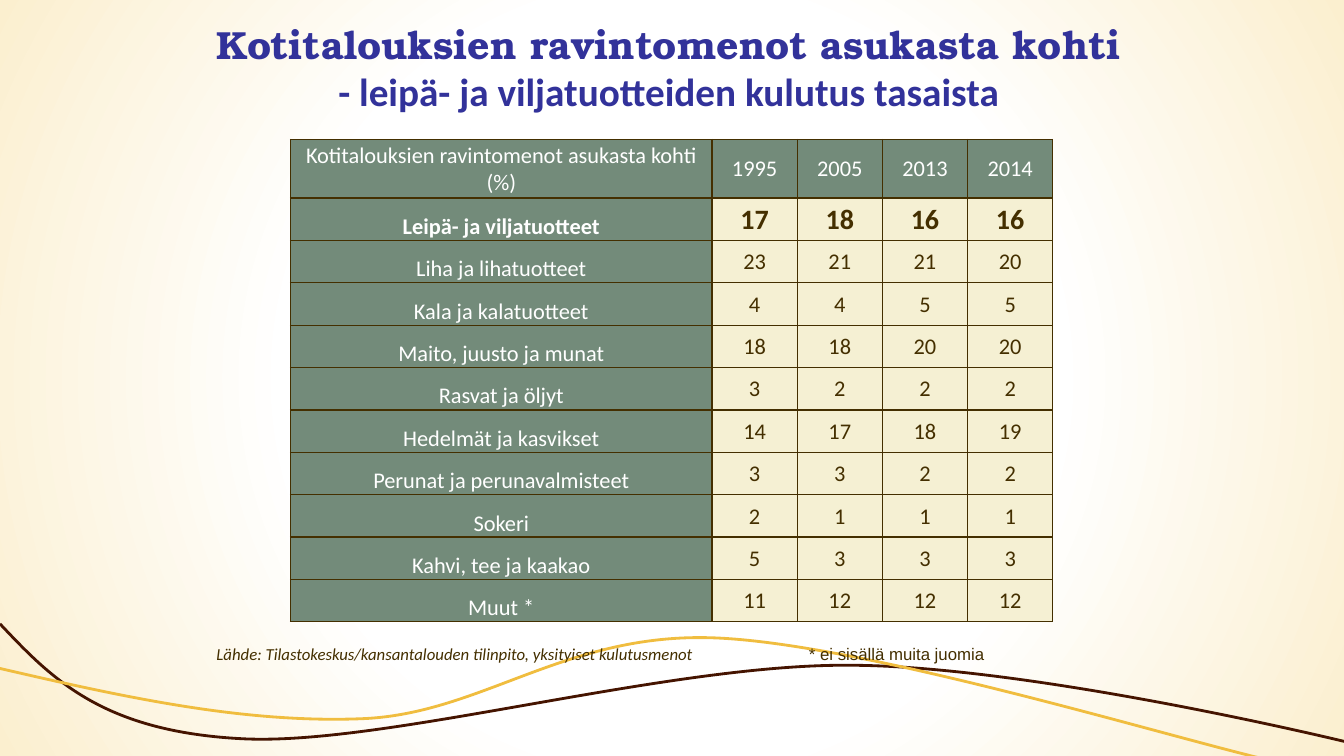
from dataclasses import dataclass

from lxml import etree
from pptx import Presentation
from pptx.dml.color import RGBColor
from pptx.enum.text import MSO_ANCHOR, MSO_AUTO_SIZE, PP_ALIGN
from pptx.oxml import parse_xml
from pptx.oxml.ns import nsdecls, qn
from pptx.util import Inches, Pt

MIDDLE, BOTTOM, TOP = MSO_ANCHOR.MIDDLE, MSO_ANCHOR.BOTTOM, MSO_ANCHOR.TOP
CENTER, LEFT = PP_ALIGN.CENTER, PP_ALIGN.LEFT
FIXED, GROW = MSO_AUTO_SIZE.NONE, MSO_AUTO_SIZE.SHAPE_TO_FIT_TEXT

BLUE = RGBColor(0x32, 0x32, 0x9A)
INK = RGBColor(0x44, 0x2F, 0x00)
WHITE = RGBColor(0xFF, 0xFF, 0xFF)
GREEN = RGBColor(0x73, 0x8B, 0x7A)
CREAM = RGBColor(0xF5, 0xF0, 0xD3)
EDGE = RGBColor(0xFB, 0xEF, 0xCF)
BROWN = RGBColor(0x45, 0x14, 0x00)
GOLD = RGBColor(0xF0, 0xBD, 0x3F)

WIDTH, HEIGHT = Inches(13.33), Inches(7.5)


@dataclass
class Box:
    """Left, top, width and height in percent of the slide."""
    left: float
    top: float
    width: float
    height: float


@dataclass
class Wave:
    """Chain of cubic curves: a start, then three points for each curve."""
    color: RGBColor
    points: list[tuple[float, float]]


@dataclass
class Note:
    text: str
    box: Box
    wrap: bool
    anchor: int
    align: int
    font: dict


WAVES = [
    Wave(BROWN, [(0, 82.53), (3.83, 89.73), (7.58, 96.8), (18.08, 97.73),
                 (28.66, 98.67), (49.44, 87.87), (63.09, 88),
                 (76.74, 88), (100.15, 98.13), (100.15, 98.13)]),
    Wave(GOLD, [(-0.08, 88.4), (9, 92.13), (18.08, 95.73), (27.01, 95.07),
                (35.93, 94.4), (42.16, 83.47), (53.41, 84.4),
                (64.67, 85.33), (86.87, 97.47), (94.67, 100.67),
                (102.55, 103.73), (101.58, 103.47), (100.53, 103.33)]),
]
TITLE = [("Kotitalouksien ravintomenot asukasta kohti", "TeX Gyre Bonum"),
         ("- leipä- ja viljatuotteiden kulutus tasaista", "Calibri")]
NOTES = [
    Note("Lähde: Tilastokeskus/kansantalouden tilinpito, yksityiset kulutusmenot",
         Box(15.23, 84.5, 37.21, 4), False, MIDDLE, CENTER,
         {"name": "Calibri", "italic": True}),
    Note("* ei sisällä muita juomia",
         Box(59.45, 84.5, 25.43, 4), True, TOP, LEFT, {"name": "Arial"}),
]
ROWS = [
    ("Kotitalouksien ravintomenot asukasta kohti (%)", 1995, 2005, 2013, 2014),
    ("Leipä- ja viljatuotteet", 17, 18, 16, 16),
    ("Liha ja lihatuotteet", 23, 21, 21, 20),
    ("Kala ja kalatuotteet", 4, 4, 5, 5),
    ("Maito, juusto ja munat", 18, 18, 20, 20),
    ("Rasvat ja öljyt", 3, 2, 2, 2),
    ("Hedelmät ja kasvikset", 14, 17, 18, 19),
    ("Perunat ja perunavalmisteet", 3, 3, 2, 2),
    ("Sokeri", 2, 1, 1, 1),
    ("Kahvi, tee ja kaakao", 5, 3, 3, 3),
    ("Muut *", 11, 12, 12, 12),
]
KEY = 1  # row that stands out
COLS = [31.36] + [6.34] * 4
TALLS = [7.73] + [5.61] * 10
GRID = Box(21.62, 18.46, sum(COLS), sum(TALLS))


def across(share: float) -> int:
    return round(WIDTH * share / 100)


def down(share: float) -> int:
    return round(HEIGHT * share / 100)


def place(box: Box) -> tuple[int, int, int, int]:
    return across(box.left), down(box.top), across(box.width), down(box.height)


def assign(item, values: dict) -> None:
    for name, value in values.items():
        setattr(item, name, value)


def style(font, color: RGBColor, **values) -> None:
    assign(font, values)
    font.color.rgb = color


def paint(slide) -> None:
    slide.background.fill.gradient()
    old = slide.background._cSld.find(".//" + qn("a:gradFill"))
    new = parse_xml(
        f'<a:gradFill {nsdecls("a")} rotWithShape="1"><a:gsLst>'
        f'<a:gs pos="50000"><a:srgbClr val="{WHITE}"/></a:gs>'
        f'<a:gs pos="100000"><a:srgbClr val="{EDGE}"/></a:gs></a:gsLst>'
        '<a:path path="circle"><a:fillToRect l="50000" t="50000" '
        'r="50000" b="50000"/></a:path></a:gradFill>')
    old.getparent().replace(old, new)


def draw_wave(slide, wave: Wave) -> None:
    spots = [(across(x), down(y)) for x, y in wave.points]
    pen = slide.shapes.build_freeform(*spots[0])
    pen.add_line_segments(spots[3::3], close=False)
    shape = pen.convert_to_shape()
    # Bend each straight part with its two control points
    for i, part in enumerate(list(shape._element.iter(qn("a:lnTo")))):
        part.tag = qn("a:cubicBezTo")
        for j, (x, y) in enumerate(spots[3 * i + 1:3 * i + 3]):
            spot = etree.Element(qn("a:pt"), x=str(x - shape.left),
                                 y=str(y - shape.top))
            part.insert(j, spot)
    shape.shadow.inherit = False
    shape.fill.background()
    shape.line.color.rgb = wave.color
    shape.line.width = Pt(2)


def draw_title(slide) -> None:
    title = slide.shapes.title
    spot = place(Box(13.7, 0.6, 72.09, 16.67))
    assign(title, dict(zip(("left", "top", "width", "height"), spot)))
    frame = title.text_frame
    assign(frame, {"auto_size": FIXED, "word_wrap": True,
                   "vertical_anchor": MIDDLE,
                   "margin_left": Inches(0.13), "margin_right": Inches(0.13),
                   "margin_top": Inches(0.06), "margin_bottom": Inches(0.06)})
    para = frame.paragraphs[0]
    para.alignment = CENTER
    for i, (text, face) in enumerate(TITLE):
        if i:
            para.add_line_break()
        run = para.add_run()
        run.text = text
        style(run.font, BLUE, name=face, size=Pt(28), bold=True)


def draw_note(slide, note: Note) -> None:
    frame = slide.shapes.add_textbox(*place(note.box)).text_frame
    assign(frame, {"text": note.text, "word_wrap": note.wrap,
                   "auto_size": GROW, "vertical_anchor": note.anchor})
    para = frame.paragraphs[0]
    para.alignment = note.align
    style(para.runs[0].font, INK, size=Pt(12), **note.font)


def border(cell) -> None:
    props = cell._tc.get_or_add_tcPr()
    for i, side in enumerate(("lnL", "lnR", "lnT", "lnB")):
        line = etree.Element(qn("a:" + side), w=str(Pt(1)))
        fill = etree.SubElement(line, qn("a:solidFill"))
        etree.SubElement(fill, qn("a:srgbClr"), val=str(INK))
        props.insert(i, line)


def draw_table(slide) -> None:
    table = slide.shapes.add_table(len(ROWS), len(COLS), *place(GRID)).table
    table.horz_banding = False
    for col, share in zip(table.columns, COLS):
        col.width = across(share)
    for row, share in zip(table.rows, TALLS):
        row.height = down(share)
    for r, values in enumerate(ROWS):
        for c, value in enumerate(values):
            cell = table.cell(r, c)
            label = c == 0 or r == 0
            assign(cell, {"text": str(value),
                          "vertical_anchor": BOTTOM if r and not c else MIDDLE,
                          "margin_left": Inches(0.01),
                          "margin_right": Inches(0.01),
                          "margin_top": Inches(0.01), "margin_bottom": 0})
            cell.fill.solid()
            cell.fill.fore_color.rgb = GREEN if label else CREAM
            border(cell)
            para = cell.text_frame.paragraphs[0]
            para.alignment = CENTER
            style(para.runs[0].font, WHITE if label else INK, name="Calibri",
                  size=Pt(20 if r == KEY and c else 16), bold=r == KEY)


def main() -> None:
    deck = Presentation()
    assign(deck, {"slide_width": WIDTH, "slide_height": HEIGHT})
    slide = deck.slides.add_slide(deck.slide_layouts[5])
    # Backdrop
    paint(slide)
    for wave in WAVES:
        draw_wave(slide, wave)
    # Heading, table and notes
    draw_title(slide)
    draw_table(slide)
    for note in NOTES:
        draw_note(slide, note)
    deck.save("out.pptx")


if __name__ == "__main__":
    main()
